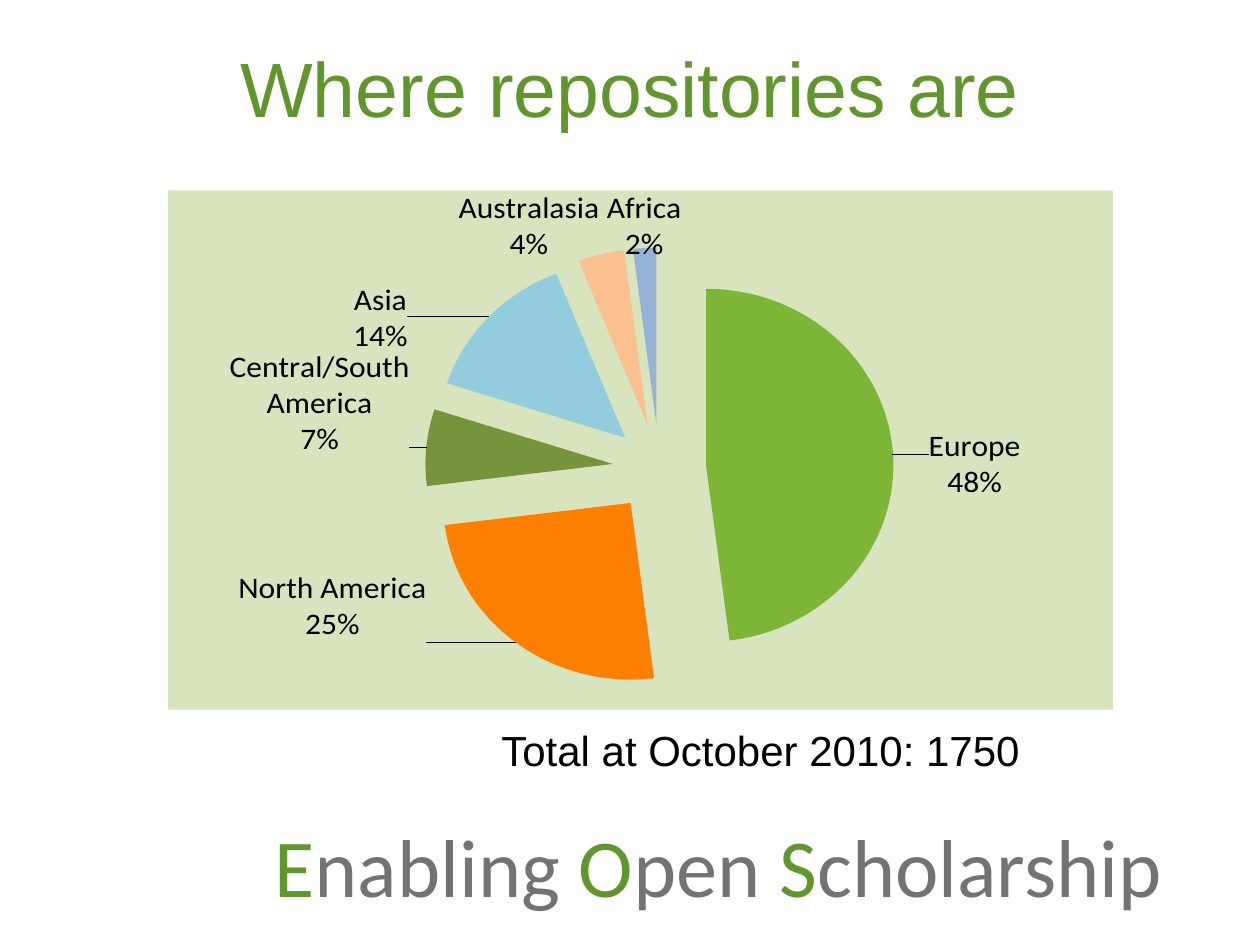
from dataclasses import dataclass
from typing import Optional

from lxml.etree import SubElement
from pptx import Presentation
from pptx.chart.data import CategoryChartData
from pptx.dml.color import RGBColor
from pptx.enum.chart import XL_CHART_TYPE as ChartType
from pptx.enum.text import MSO_ANCHOR as Anchor, PP_ALIGN as Align
from pptx.oxml import parse_xml
from pptx.oxml.ns import nsdecls, qn
from pptx.util import Emu, Pt

PX = 914400 / 126
GREEN, BLACK, PANEL = "61952D", "000000", "D7E4BD"
NS = nsdecls("c", "a")
SHOW = """<c:showLegendKey val="0"/><c:showVal val="0"/><c:showCatName val="1"/>
<c:showSerName val="0"/><c:showPercent val="1"/><c:showBubbleSize val="0"/>
<c:separator>\n</c:separator>"""


@dataclass
class Run:
    text: str
    color: str = BLACK
    alpha: int = 100


@dataclass
class TextLine:
    box: tuple[int, int, int, int]
    runs: list[Run]
    size: int
    font: str = "Arial"
    align: Align = Align.LEFT
    anchor: Anchor = Anchor.TOP


@dataclass
class Region:
    name: str
    share: int
    color: str
    label_shift: Optional[tuple[float, float]] = None


TEXTS = [
    TextLine((262, 809, 966, 112),
             [Run("E", GREEN), Run("nabling ", alpha=54),
              Run("O", GREEN), Run("pen ", alpha=54),
              Run("S", GREEN), Run("cholarship", alpha=54)], 47, "Calibri"),
    TextLine((63, 38, 1134, 98), [Run("Where repositories are", GREEN)], 44,
             align=Align.CENTER, anchor=Anchor.MIDDLE),
    TextLine((489, 718, 640, 63), [Run("Total at October 2010: 1750")], 24),
]
REGIONS = [
    Region("Europe", 48, "7DB536", (0.03, 0.02)),
    Region("North America", 25, "FF8000", (-0.09, -0.15)),
    Region("Central/South America", 7, "77933C", (-0.01, 0.02)),
    Region("Asia", 14, "93CDDD", (-0.08, 0.08)),
    Region("Australasia", 4, "FAC090"),
    Region("Africa", 2, "95B3D7"),
]


def px(*lengths: int) -> list[Emu]:
    return [Emu(round(n * PX)) for n in lengths]


def rgb(color: str) -> RGBColor:
    return RGBColor.from_string(color)


def add_text(s, line: TextLine) -> None:
    tf = s.shapes.add_textbox(*px(*line.box)).text_frame
    tf.word_wrap = True
    tf.vertical_anchor = line.anchor
    p = tf.paragraphs[0]
    p.alignment = line.align
    for run in line.runs:
        r = p.add_run()
        r.text = run.text
        for key, value in {"size": Pt(line.size), "name": line.font}.items():
            setattr(r.font, key, value)
        r.font.color.rgb = rgb(run.color)
        if run.alpha < 100:
            clr = r.font.fill._xPr.find(".//" + qn("a:srgbClr"))
            SubElement(clr, qn("a:alpha"), val=str(run.alpha * 1000))


def label_xml(idx: int, shift: tuple[float, float]) -> str:
    """One data label moved from its default place by a share of the chart."""
    x, y = shift
    return (f'<c:dLbl><c:idx val="{idx}"/><c:layout><c:manualLayout>'
            f'<c:x val="{x}"/><c:y val="{y}"/></c:manualLayout></c:layout>'
            f'<c:dLblPos val="bestFit"/>{SHOW}</c:dLbl>')


def add_pie(s, box: tuple[int, int, int, int], regions: list[Region]) -> None:
    data = CategoryChartData()
    data.categories = [region.name for region in regions]
    data.add_series("Series 1", [region.share for region in regions])
    chart = s.shapes.add_chart(ChartType.PIE, *px(*box), data).chart
    chart.has_legend = chart.has_title = False
    for key, value in {"size": Pt(18), "name": "Calibri"}.items():
        setattr(chart.font, key, value)
    chart.font.color.rgb = rgb(BLACK)

    plot = chart.plots[0]
    plot.vary_by_categories = True
    series = plot.series[0]
    for i, region in enumerate(regions):
        fill = series.points[i].format.fill
        fill.solid()
        fill.fore_color.rgb = rgb(region.color)

    ser = series._element
    ser.find(qn("c:dPt")).addprevious(
        parse_xml(f'<c:explosion {NS} val="25"/>'))
    moved = "".join(label_xml(i, region.label_shift)
                    for i, region in enumerate(regions) if region.label_shift)
    ser.find(qn("c:cat")).addprevious(parse_xml(
        f'<c:dLbls {NS}>{moved}<c:numFmt formatCode="0%" sourceLinked="0"/>'
        f'<c:dLblPos val="bestFit"/>{SHOW}<c:showLeaderLines val="1"/></c:dLbls>'))

    space = chart._chartSpace
    area = space.find(".//" + qn("c:plotArea"))
    for old in area.findall(qn("c:layout")):
        area.remove(old)
    place = {"x": 0.27, "y": 0.11, "w": 0.5, "h": 0.85}
    sizes = "".join(f'<c:{key} val="{value}"/>' for key, value in place.items())
    area.insert(0, parse_xml(
        f'<c:layout {NS}><c:manualLayout><c:layoutTarget val="inner"/>'
        f'<c:xMode val="edge"/><c:yMode val="edge"/>{sizes}'
        '</c:manualLayout></c:layout>'))
    space.find(qn("c:chart")).addnext(parse_xml(
        f'<c:spPr {NS}><a:solidFill><a:srgbClr val="{PANEL}"/></a:solidFill>'
        '<a:ln><a:noFill/></a:ln></c:spPr>'))


def main() -> None:
    prs = Presentation()
    prs.slide_width, prs.slide_height = px(1260, 945)
    s = prs.slides.add_slide(prs.slide_layouts[6])
    footer, title, total = TEXTS
    add_text(s, footer)
    add_text(s, title)
    add_pie(s, (168, 169, 945, 551), REGIONS)
    add_text(s, total)
    prs.save("out.pptx")


if __name__ == "__main__":
    main()
